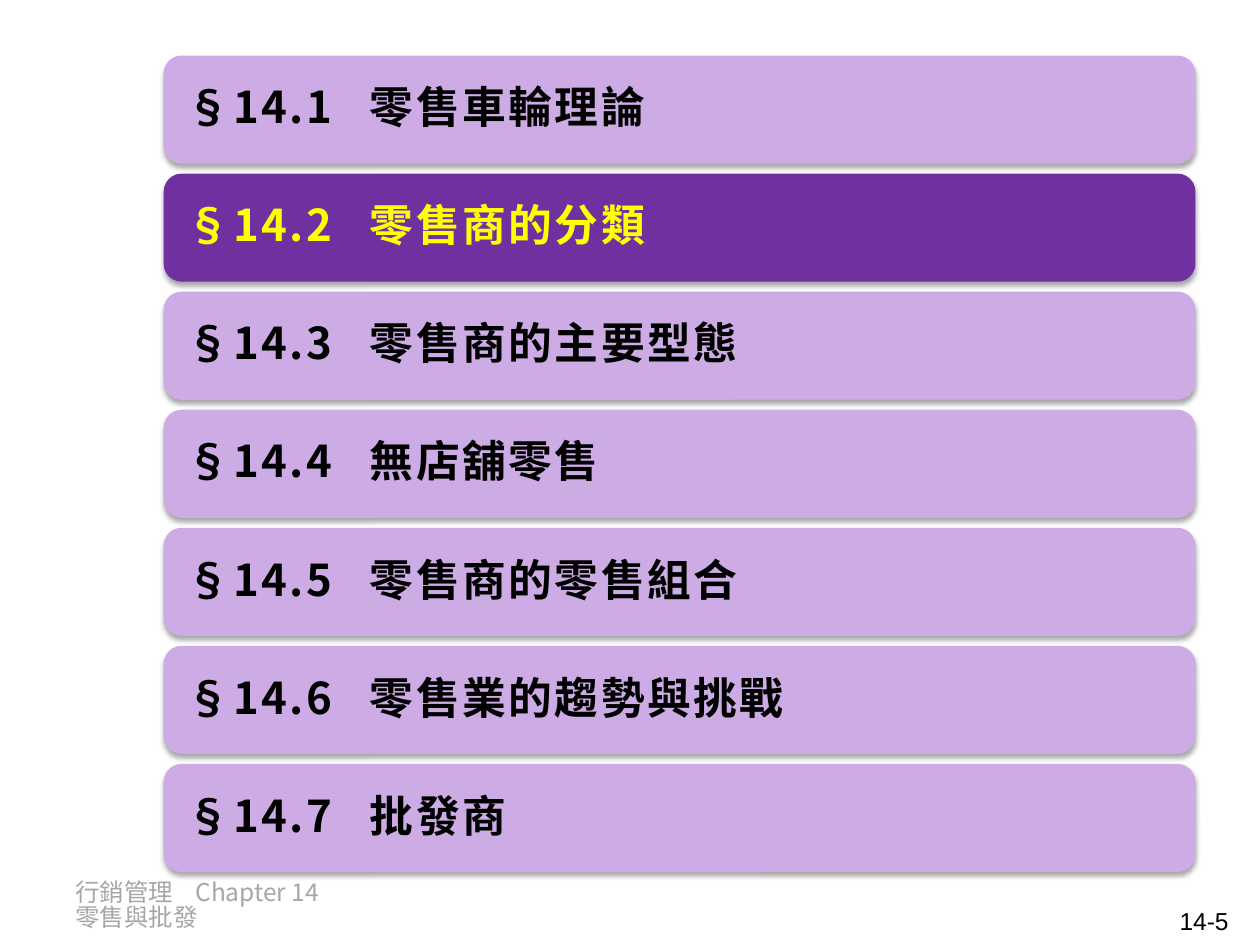
from dataclasses import dataclass

from lxml.etree import SubElement
from pptx import Presentation
from pptx.dml.color import RGBColor
from pptx.enum.shapes import MSO_SHAPE as Shape
from pptx.enum.text import MSO_ANCHOR as Anchor, PP_ALIGN as Align
from pptx.oxml.ns import qn
from pptx.util import Cm, Pt


@dataclass(frozen=True)
class Theme:
    bar: str = "CDACE6"
    current_bar: str = "7030A0"
    ink: str = "000000"
    current_ink: str = "FFFF00"
    footer_ink: str = "A6A6A6"
    shadow: str = "000000"
    latin: str = "Arial"
    cjk: str = "Noto Sans CJK SC"
    section_size: float = 25
    footer_size: float = 14


THEME = Theme()
SECTIONS = [
    "零售車輪理論",
    "零售商的分類",
    "零售商的主要型態",
    "無店舖零售",
    "零售商的零售組合",
    "零售業的趨勢與挑戰",
    "批發商",
]
CURRENT_SECTION = 2


def write_text(frame, *parts, size, color, bold=False, align=Align.LEFT,
               anchor=Anchor.TOP, line_spacing=1.0, tracking=0, tab=None,
               inset=0.25):
    frame.word_wrap = True
    frame.vertical_anchor = anchor
    frame.margin_left = frame.margin_right = Cm(inset)
    frame.margin_top = frame.margin_bottom = Cm(0.13)
    paragraph = frame.paragraphs[0]
    paragraph.alignment = align
    paragraph.line_spacing = line_spacing
    if tab:
        stops = SubElement(paragraph._p.get_or_add_pPr(), qn("a:tabLst"))
        SubElement(stops, qn("a:tab"), pos=str(Cm(tab)), algn="l")
    for wording, latin in parts:
        for index, line in enumerate(wording.split("\n")):
            if index:
                paragraph.add_line_break()
            run = paragraph.add_run()
            run.text = line
            font = run.font
            font.size, font.bold, font.name = Pt(size), bold, latin
            font.color.rgb = RGBColor.from_string(color)
            properties = run._r.get_or_add_rPr()
            properties.set("spc", str(int(tracking * 100)))
            SubElement(properties, qn("a:ea"), typeface=THEME.cjk)


def cast_shadow(shape):
    shape.shadow.inherit = False
    effects = shape._element.spPr.find(qn("a:effectLst"))
    shadow = SubElement(effects, qn("a:outerShdw"), blurRad=str(Pt(3.1)),
                        dist=str(Pt(1.8)), dir="5400000", rotWithShape="0")
    color = SubElement(shadow, qn("a:srgbClr"), val=THEME.shadow)
    SubElement(color, qn("a:alpha"), val="35000")


def add_section_list(slide, left, top, width, height, gap=0.2):
    bar_height = (height - gap * (len(SECTIONS) - 1)) / len(SECTIONS)
    for number, heading in enumerate(SECTIONS, start=1):
        is_current = number == CURRENT_SECTION
        bar_top = top + (number - 1) * (bar_height + gap)
        bar = slide.shapes.add_shape(Shape.ROUNDED_RECTANGLE, Cm(left),
                                     Cm(bar_top), Cm(width), Cm(bar_height))
        bar.fill.solid()
        bar.fill.fore_color.rgb = RGBColor.from_string(
            THEME.current_bar if is_current else THEME.bar)
        bar.line.fill.background()
        cast_shadow(bar)
        write_text(bar.text_frame, (f"§14.{number}\t", THEME.cjk),
                   (heading, THEME.latin), size=THEME.section_size,
                   color=THEME.current_ink if is_current else THEME.ink,
                   bold=True, anchor=Anchor.MIDDLE, line_spacing=0.9,
                   tracking=1.5, tab=3.69, inset=0.36)


def add_footer(slide, left, top, width, height):
    chapter = slide.shapes.add_textbox(Cm(left), Cm(top), Cm(6.22), Cm(height))
    write_text(chapter.text_frame,
               ("行銷管理\tChapter 14\n零售與批發", THEME.cjk),
               size=THEME.footer_size, color=THEME.footer_ink,
               line_spacing=0.85, tab=2.42)
    page_width, page_drop = 5.92, 0.48
    page = slide.shapes.add_textbox(Cm(left + width - page_width),
                                    Cm(top + page_drop), Cm(page_width),
                                    Cm(height - page_drop + 0.2))
    write_text(page.text_frame, ("14-5", THEME.latin), size=THEME.footer_size,
               color=THEME.ink, align=Align.RIGHT)


def main():
    deck = Presentation()
    deck.slide_width, deck.slide_height = Cm(25.4), Cm(19.05)
    slide = deck.slides.add_slide(deck.slide_layouts[6])
    add_footer(slide, left=1.27, top=17.65, width=23.75, height=1.02)
    add_section_list(slide, left=3.3, top=1.12, width=20.8, height=16.46)
    deck.save("out.pptx")


if __name__ == "__main__":
    main()
